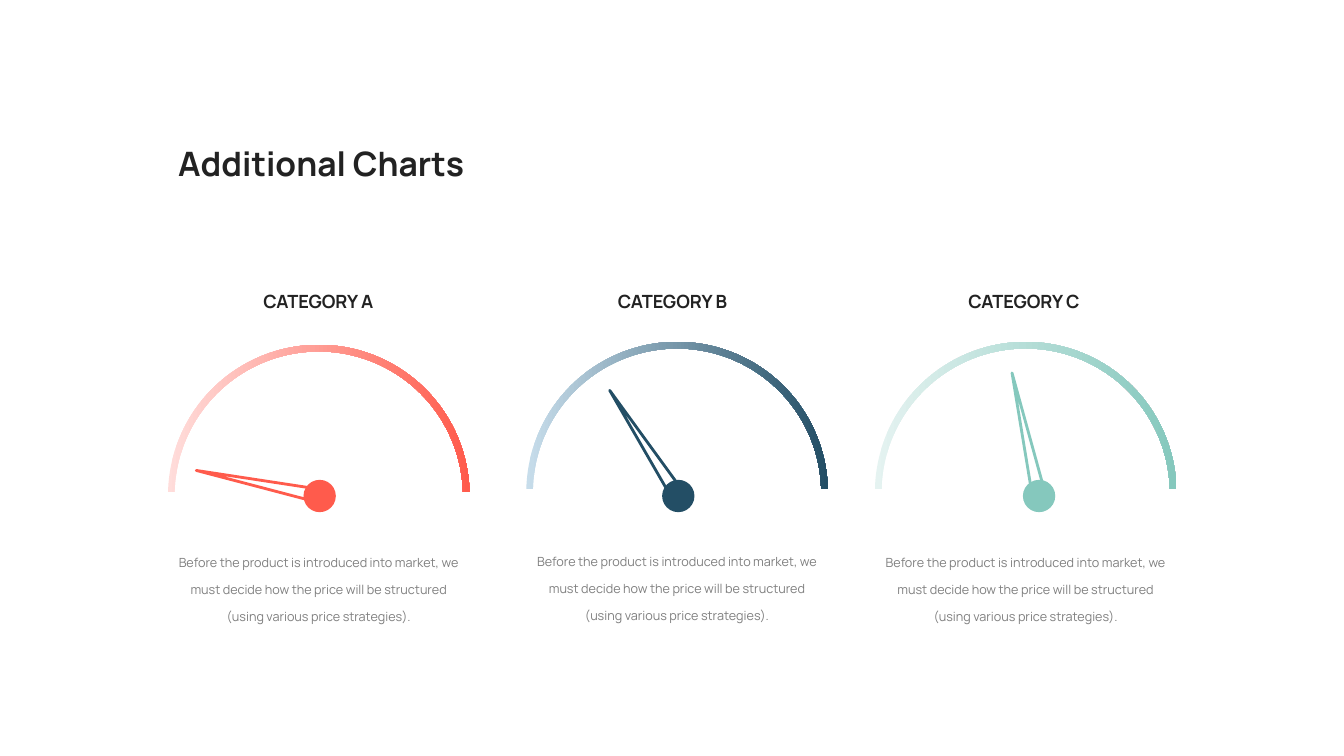
from math import cos, radians, sin
from lxml.etree import SubElement
from pptx import Presentation
from pptx.dml.color import RGBColor
from pptx.enum.shapes import MSO_SHAPE
from pptx.enum.text import MSO_ANCHOR, MSO_AUTO_SIZE, PP_ALIGN
from pptx.oxml.ns import qn
from pptx.util import Inches, Pt

COLS, ROWS = 32, 18
NOTE = ("Before the product is introduced into market, we must decide how "
        "the price will be structured (using various price strategies).")
GAUGES = [
    {"name": "CATEGORY A", "pale": "FFDDDB", "deep": "FF5B4C", "turn": 281.7,
     "left": 4, "top": 8.21, "head": 4.46, "hub": 7.61, "foot": 12.82},
    {"name": "CATEGORY B", "pale": "C7DDEB", "deep": "234E65", "turn": 327,
     "left": 12.53, "top": 8.14, "head": 12.89, "hub": 16.15, "foot": 12.79},
    {"name": "CATEGORY C", "pale": "E5F3F1", "deep": "85C8BD", "turn": 347.6,
     "left": 20.83, "top": 8.14, "head": 21.26, "hub": 24.74, "foot": 12.82},
]


def tint(code):
    return RGBColor.from_string(code)


class Deck:
    """Holds the style and the current slide, laid out on a square grid."""

    font, ink, gray = "Manrope", "222222", "7F7F7F"

    def __init__(self):
        self.file = Presentation()
        self.file.slide_width = Inches(13.33)
        self.file.slide_height = Inches(7.5)
        self.slide = self.file.slides.add_slide(self.file.slide_layouts[5])

    def cell(self, col, row):
        return (round(self.file.slide_width * col / COLS),
                round(self.file.slide_height * row / ROWS))

    def box(self, col, row, wide, high):
        return *self.cell(col, row), *self.cell(wide, high)

    def text(self, frame, words, size, code, bold, align, space):
        frame.word_wrap = True
        frame.vertical_anchor = MSO_ANCHOR.TOP
        para = frame.paragraphs[0]
        para.alignment = align
        para.line_spacing = space
        run = para.add_run()
        run.text = words
        run.font.name = self.font
        run.font.size = Pt(size)
        run.font.bold = bold
        run.font.color.rgb = tint(code)

    def title(self, words, *area):
        shape = self.slide.shapes.title
        shape.left, shape.top, shape.width, shape.height = self.box(*area)
        shape.text_frame.auto_size = MSO_AUTO_SIZE.NONE
        self.text(shape.text_frame, words, 24, self.ink, True, PP_ALIGN.LEFT, 1.0)

    def label(self, words, *area):
        frame = self.slide.shapes.add_textbox(*self.box(*area)).text_frame
        frame.margin_left = frame.margin_right = 0
        frame.auto_size = MSO_AUTO_SIZE.SHAPE_TO_FIT_TEXT
        self.text(frame, words, 13, self.ink, True, PP_ALIGN.CENTER, 1.2)

    def note(self, words, *area):
        frame = self.slide.shapes.add_textbox(*self.box(*area)).text_frame
        self.text(frame, words, 9, self.gray, False, PP_ALIGN.CENTER, 1.78)

    def shape(self, kind, *area):
        shape = self.slide.shapes.add_shape(kind, *self.box(*area))
        shape.shadow.inherit = False
        shape.line.fill.background()
        return shape

    def arc(self, pale, deep, *area):
        shape = self.shape(MSO_SHAPE.BLOCK_ARC, *area)
        for i, value in enumerate((108.83, 215.18, 2.2 / 100)):
            shape.adjustments[i] = value
        shape.fill.gradient()
        shape.fill.gradient_angle = 0
        for stop, code in zip(shape.fill.gradient_stops, (pale, deep)):
            stop.color.rgb = tint(code)

    def needle(self, col, row, turn, code):
        up, side = sin(radians(turn)), cos(radians(turn))
        edge = [(3, 0), (0.34, 0.14), (0.22, 0.1), (0.22, -0.1), (0.34, -0.14)]
        points = [self.cell(col + far * up + off * side,
                            row - far * side + off * up)
                  for far, off in edge]
        form = self.slide.shapes.build_freeform(*points[0])
        form.add_line_segments(points[1:], close=True)
        shape = form.convert_to_shape()
        shape.shadow.inherit = False
        shape.fill.solid()
        shape.fill.fore_color.rgb = tint("FFFFFF")
        shape.line.width = Pt(2)
        shape.line.color.rgb = tint(code)
        SubElement(shape.element.spPr.find(qn("a:ln")), qn("a:round"))

    def hub(self, col, row, size, code):
        shape = self.shape(MSO_SHAPE.OVAL, col - size / 2, row - size / 2, size, size)
        shape.fill.solid()
        shape.fill.fore_color.rgb = tint(code)

    def gauge(self, name, pale, deep, turn, left, top, head, hub, foot):
        self.label(name, head, 6.7, 6.24, 0.84)
        self.arc(pale, deep, left, top, 7.18, 7.18)
        self.needle(hub, 11.81, turn, deep)
        self.hub(hub, 11.81, 0.77, deep)
        self.note(NOTE, left - 0.1, foot, 7.37, 2.35)


def main():
    deck = Deck()
    deck.title("Additional Charts", 4, 3.29, 12, 2.69)
    for item in GAUGES:
        deck.gauge(**item)
    deck.file.save("out.pptx")


if __name__ == "__main__":
    main()
